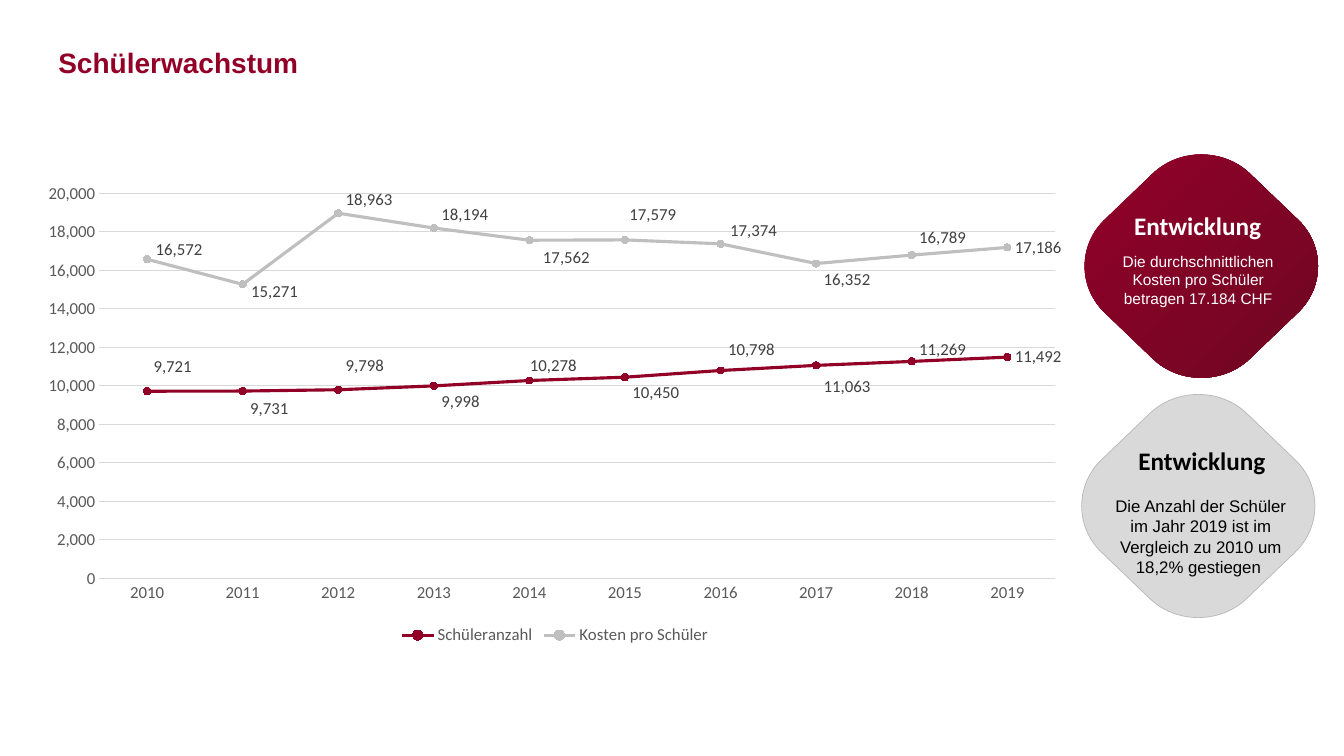
import pptx
import pptx.chart.data
import pptx.dml.color
import pptx.enum.chart
import pptx.enum.text
import pptx.oxml
import pptx.oxml.ns
import pptx.util

Inches = pptx.util.Inches
Pt = pptx.util.Pt
RGBColor = pptx.dml.color.RGBColor
qn = pptx.oxml.ns.qn
nsdecls = pptx.oxml.ns.nsdecls
XL = pptx.enum.chart
ALIGN = pptx.enum.text.PP_ALIGN
ANCHOR = pptx.enum.text.MSO_ANCHOR

WINE = RGBColor(0x92, 0x00, 0x28)
WINE_LIGHT = RGBColor(0x91, 0x00, 0x29)
WINE_DARK = RGBColor(0x6F, 0x07, 0x22)
SILVER = RGBColor(0xBF, 0xBF, 0xBF)
PALE = RGBColor(0xD9, 0xD9, 0xD9)
AXIS_GREY = RGBColor(0x59, 0x59, 0x59)
LABEL_GREY = RGBColor(0x40, 0x40, 0x40)
BLACK = RGBColor(0, 0, 0)
WHITE = RGBColor(255, 255, 255)

DIAMOND_W, DIAMOND_H = 2.31, 2.22
# Bezier points of the right and bottom corners, from the diamond's centre
CORNERS = (
    ((0.97, -0.45), (1.22, -0.2), (1.22, 0.2), (0.97, 0.45)),
    ((0.48, 0.92), (0.22, 1.17), (-0.22, 1.17), (-0.48, 0.92)),
)

YEARS = [str(year) for year in range(2010, 2020)]
# Name, colour, values, label shifts in inches from the place right of the point
SERIES = [
    ("Schüleranzahl", WINE,
     (9721, 9731, 9798, 9998, 10278, 10450, 10798, 11063, 11269, 11492),
     ((-0.01, -0.24), (0, 0.18), (0, -0.24), (0, 0.16), (-0.07, -0.15),
      (0, 0.15), (0, -0.21), (0, 0.21), (0, -0.12))),
    ("Kosten pro Schüler", SILVER,
     (16572, 15271, 18963, 18194, 17562, 17579, 17374, 16352, 16789, 17186),
     ((0.01, -0.1), (0.01, 0.07), (0, -0.13), (0, -0.13), (0.06, 0.17),
      (-0.03, -0.25), (0.02, -0.13), (0, 0.16), (0, -0.17))),
]


def set_font(font, size=12, color=AXIS_GREY, name="Calibri", bold=False):
    font.size, font.name, font.bold = Pt(size), name, bold
    font.color.rgb = color


def manual_layout(x, y, w=None, h=None):
    """Return a c:layout element; with a size it places the inner plot area."""
    parts = [("x", x), ("y", y)]
    if w is not None:
        parts = [("layoutTarget", "inner"), ("xMode", "edge"), ("yMode", "edge"),
                 *parts, ("w", w), ("h", h)]
    body = "".join(f'<c:{tag} val="{val}"/>' for tag, val in parts)
    return pptx.oxml.parse_xml(
        f'<c:layout {nsdecls("c")}><c:manualLayout>{body}</c:manualLayout></c:layout>')


def hide_leader_lines(labels_xml):
    for old in labels_xml.findall(qn("c:showLeaderLines")):
        old.set("val", "0")
    labels_xml.append(pptx.oxml.parse_xml(
        f'<c:extLst {nsdecls("c")}><c:ext uri="{{CE6537A1-D6FC-4f65-9D91-7224C49458BB}}" '
        'xmlns:c15="http://schemas.microsoft.com/office/drawing/2012/chart">'
        '<c15:showLeaderLines val="0"/></c:ext></c:extLst>'))


def curve_outline(outline):
    """Replace a rectangular outline by four curved corners and straight sides."""
    for child in list(outline):
        outline.remove(child)

    def add(tag, points=()):
        pts = "".join(f'<a:pt x="{Inches(DIAMOND_W / 2 + x)}" y="{Inches(DIAMOND_H / 2 + y)}"/>'
                      for x, y in points)
        outline.append(pptx.oxml.parse_xml(f'<a:{tag} {nsdecls("a")}>{pts}</a:{tag}>'))

    corners = [[(sign * x, sign * y) for x, y in corner] for sign in (1, -1) for corner in CORNERS]
    for i, corner in enumerate(corners):
        add("lnTo" if i else "moveTo", corner[:1])
        add("cubicBezTo", corner[1:])
    add("close")


class SlideBuilder:
    def __init__(self, slide):
        self.s = slide

    def text(self, text, x, y, w, h, align=ALIGN.LEFT, anchor=ANCHOR.TOP, **style):
        tf = self.s.shapes.add_textbox(Inches(x), Inches(y), Inches(w), Inches(h)).text_frame
        tf.word_wrap = True
        tf.vertical_anchor = anchor
        p = tf.paragraphs[0]
        p.alignment = align
        r = p.add_run()
        r.text = text
        set_font(r.font, **style)

    def diamond(self, x, y, *colors, outline=None, opacity=20):
        """Draw a rounded diamond; two colours make a diagonal gradient."""
        left, top = Inches(x), Inches(y)
        right, bottom = left + Inches(DIAMOND_W), top + Inches(DIAMOND_H)
        builder = self.s.shapes.build_freeform(left, top)
        builder.add_line_segments([(right, top), (right, bottom), (left, bottom)])
        sp = builder.convert_to_shape()
        curve_outline(next(sp._element.iter(qn("a:path"))))
        sp.shadow.inherit = False
        if len(colors) == 2:
            sp.fill.gradient()
            sp.fill.gradient_angle = 315
            for stop, color in zip(sp.fill.gradient_stops, colors):
                stop.color.rgb = color
        else:
            sp.fill.solid()
            sp.fill.fore_color.rgb = colors[0]
        if outline is None:
            sp.line.fill.background()
        else:
            sp.line.width = Pt(0.5)
            sp.line.color.rgb = outline
            clr = next(sp.line._ln.iter(qn("a:srgbClr")))
            clr.append(pptx.oxml.parse_xml(f'<a:alpha {nsdecls("a")} val="{opacity * 1000}"/>'))

    def line_chart(self, x, y, w, h):
        data = pptx.chart.data.CategoryChartData(number_format="#,##0")
        data.categories = YEARS
        for name, _, values, _ in SERIES:
            data.add_series(name, values)
        chart = self.s.shapes.add_chart(
            XL.XL_CHART_TYPE.LINE_MARKERS, Inches(x), Inches(y), Inches(w), Inches(h), data).chart
        set_font(chart.font, 10, BLACK)
        chart.has_title = False
        chart.has_legend = True
        chart.legend.position = XL.XL_LEGEND_POSITION.BOTTOM
        chart.legend.include_in_layout = False
        set_font(chart.legend.font)
        self.axes(chart)
        for series, (_, color, _, shifts) in zip(chart.plots[0].series, SERIES):
            self.series(series, color, [(dx / w, dy / h) for dx, dy in shifts])
        plot_area = chart._chartSpace.chart.plotArea
        for old in plot_area.findall(qn("c:layout")):
            plot_area.remove(old)
        plot_area.insert(0, manual_layout(0.059, 0.05, 0.925, 0.803))

    def axes(self, chart):
        for axis in (chart.category_axis, chart.value_axis):
            axis.major_tick_mark = axis.minor_tick_mark = XL.XL_TICK_MARK.NONE
            set_font(axis.tick_labels.font)
        value_axis = chart.value_axis
        value_axis.tick_labels.number_format = "#,##0"
        value_axis.tick_labels.number_format_is_linked = False
        value_axis.format.line.fill.background()
        for line in (chart.category_axis.format.line, value_axis.major_gridlines.format.line):
            line.width = Pt(0.75)
            line.color.rgb = PALE

    def series(self, series, color, shifts):
        series.smooth = False
        series.format.line.width = Pt(2.25)
        series.format.line.color.rgb = color
        marker = series.marker
        marker.style, marker.size = XL.XL_MARKER_STYLE.CIRCLE, 5
        marker.format.fill.solid()
        marker.format.fill.fore_color.rgb = color
        marker.format.line.color.rgb = color
        labels = series.data_labels
        labels.show_value = True
        labels.number_format, labels.number_format_is_linked = "#,##0", False
        labels.position = XL.XL_LABEL_POSITION.RIGHT
        set_font(labels.font, color=LABEL_GREY)
        for i in range(len(shifts)):
            label = series.points[i].data_label
            set_font(label.font, color=LABEL_GREY)
            label.position = XL.XL_LABEL_POSITION.RIGHT
        for element, shift in zip(series._element.iter(qn("c:dLbl")), shifts):
            element.insert(1, manual_layout(*(round(v, 4) for v in shift)))
        hide_leader_lines(next(series._element.iter(qn("c:dLbls"))))


def main():
    prs = pptx.Presentation()
    prs.slide_width, prs.slide_height = Inches(13.33), Inches(7.5)
    b = SlideBuilder(prs.slides.add_slide(prs.slide_layouts[6]))

    b.diamond(10.73, 3.91, PALE, outline=BLACK)
    b.text("Schülerwachstum ", 0.48, 0.4, 3, 0.44, size=20, color=WINE, name="Arial", bold=True)
    b.text("Die Anzahl der Schüler im Jahr 2019 ist im Vergleich zu 2010 um 18,2% gestiegen ",
           10.9, 4.26, 2.02, 1.51, ALIGN.CENTER, ANCHOR.BOTTOM, color=BLACK, name="Arial")
    b.text("Entwicklung", 10.42, 4.37, 3, 0.71, ALIGN.CENTER, size=18, color=BLACK, bold=True)

    b.diamond(10.76, 1.53, WINE_LIGHT, WINE_DARK)
    b.text("Entwicklung", 11.15, 2.04, 3, 0.4, size=18, color=WHITE, bold=True)
    b.text("Die durchschnittlichen Kosten pro Schüler betragen 17.184 CHF",
           10.85, 2.45, 2.07, 0.66, ALIGN.CENTER, size=11, color=WHITE, name="Arial")

    b.line_chart(0.38, 1.68, 10.25, 4.76)
    prs.save("out.pptx")


if __name__ == "__main__":
    main()
